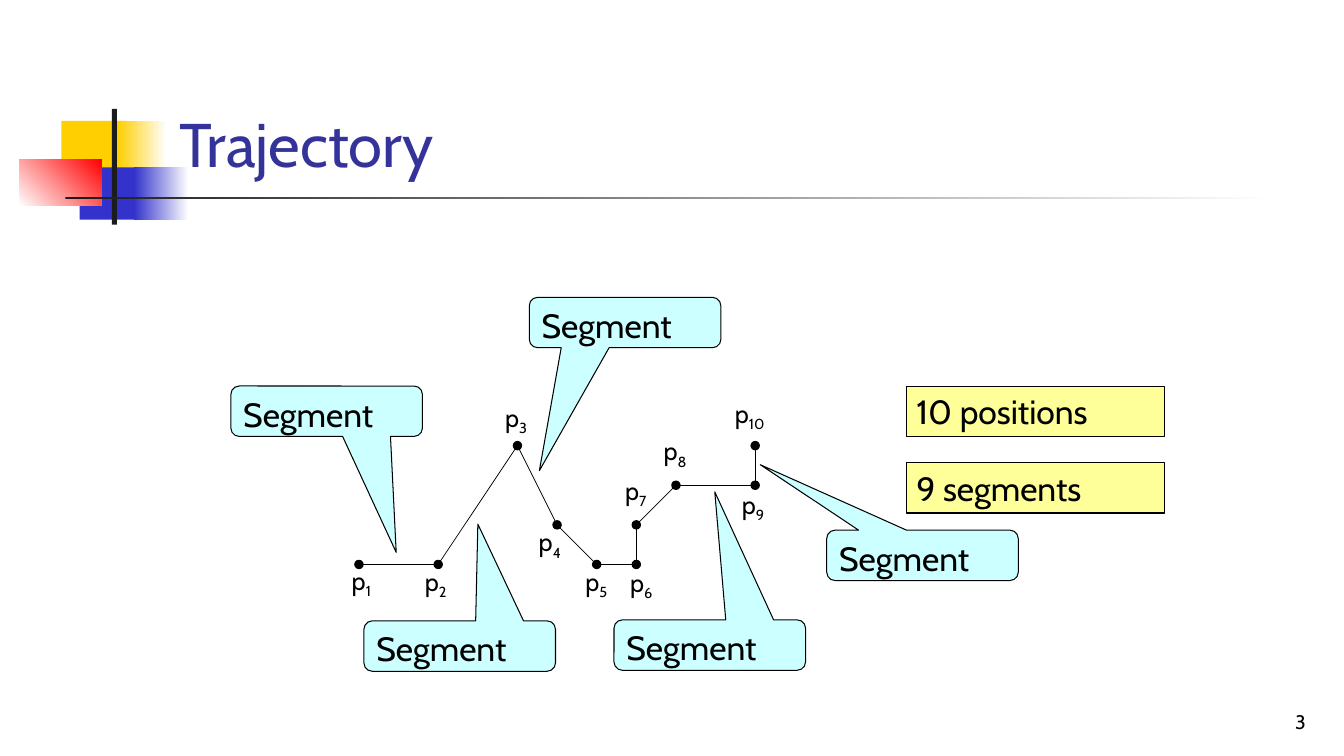
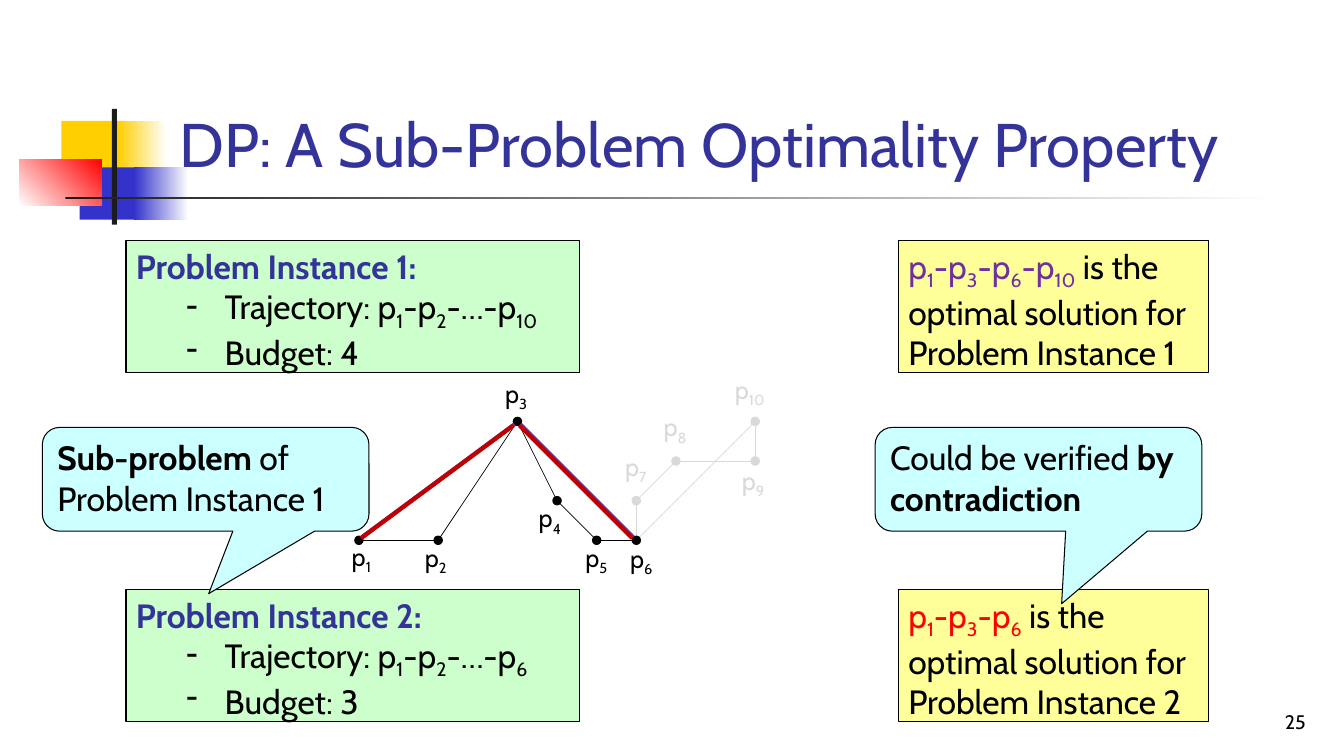
from collections import namedtuple
from itertools import pairwise

from lxml import etree
from pptx import Presentation
from pptx.dml.color import RGBColor
from pptx.enum.shapes import MSO_CONNECTOR, MSO_SHAPE
from pptx.enum.text import MSO_ANCHOR, MSO_AUTO_SIZE, PP_ALIGN
from pptx.oxml.ns import qn
from pptx.util import Inches, Pt

RECT, OVAL = MSO_SHAPE.RECTANGLE, MSO_SHAPE.OVAL
CALLOUT = MSO_SHAPE.ROUNDED_RECTANGULAR_CALLOUT
STRAIGHT = MSO_CONNECTOR.STRAIGHT
TOP, BOTTOM = MSO_ANCHOR.TOP, MSO_ANCHOR.BOTTOM
LEFT, RIGHT = PP_ALIGN.LEFT, PP_ALIGN.RIGHT
NO_FIT = MSO_AUTO_SIZE.NONE

FONT = "Cabin"
COLORS = {
    "black": "000000", "white": "FFFFFF", "title": "333399",
    "gold": "FFCF01", "blue": "3333CC", "red": "FF0000", "ink": "1C1C1C",
    "callout": "CCFFFF", "result": "FFFF99", "instance": "CCFFCC",
    "faded": "D9D9D9", "purple": "7030A0", "dark red": "C00000",
}

# Corner decoration: left, top, width, height, colours, gradient angle
BANDS = [
    (0.61, 1.2, 0.64, 0.52, ["gold"], 0),
    (1.17, 1.2, 0.48, 0.52, ["gold", "white"], 0),
    (0.79, 1.66, 0.62, 0.52, ["blue"], 0),
    (1.33, 1.66, 0.54, 0.52, ["blue", "white"], 0),
    (0.19, 1.58, 0.82, 0.46, ["white", "red"], 45),
    (1.11, 1.08, 0.05, 1.15, ["ink"], 0),
    (0.65, 1.95, 12, 0.03, ["ink", "white"], 0),
]

# Grid column and row of each position, and its label's offset in inches
Position = namedtuple("Position", "column row label_dx label_dy")
TRAJECTORY = {
    1: Position(0, 0, -0.17, -0.04),
    2: Position(2, 0, -0.23, -0.03),
    3: Position(4, 3, -0.22, -0.48),
    4: Position(5, 1, -0.28, -0.03),
    5: Position(6, 0, -0.21, -0.03),
    6: Position(7, 0, -0.16, -0.02),
    7: Position(7, 1, -0.21, -0.54),
    8: Position(8, 2, -0.22, -0.54),
    9: Position(10, 2, -0.23, -0.01),
    10: Position(10, 3, -0.3, -0.52),
}
GRID_LEFT, GRID_WIDTH, GRID_COLUMNS = 3.56, 3.93, 10
GRID_STEP = GRID_WIDTH / GRID_COLUMNS
DOT = 0.08
TRIM = 0.03


def rgb(color):
    return RGBColor.from_string(COLORS[color])


class Deck:
    """Holds the style, the presentation and the slide being drawn."""

    def __init__(self):
        self.prs = Presentation()
        self.prs.slide_width, self.prs.slide_height = Inches(13.33), Inches(7.5)
        self.shapes = None

    def new_slide(self, title, number):
        slide = self.prs.slides.add_slide(self.prs.slide_layouts[5])
        self.shapes = slide.shapes
        for left, top, width, height, colors, angle in BANDS:
            self.shape(RECT, (left, top, width, height), colors, angle=angle)
        heading = self.shapes.title
        heading.left, heading.top = Inches(1.68), Inches(0.23)
        heading.width, heading.height = Inches(11.36), Inches(1.6)
        self.fill_text(heading, [title], 44, "title", anchor=BOTTOM)
        self.text((10.27, 6.83, 2.78, 0.5), str(number), 14,
                  align=RIGHT, anchor=BOTTOM)

    def shape(self, kind, box, colors, line=None, line_width=0.75, angle=0):
        """Add a shape; two fill colours make a gradient."""
        shape = self.shapes.add_shape(kind, *map(Inches, box))
        shape.shadow.inherit = False
        if len(colors) == 1:
            shape.fill.solid()
            shape.fill.fore_color.rgb = rgb(colors[0])
        else:
            shape.fill.gradient()
            shape.fill.gradient_angle = angle
            for stop, color in zip(shape.fill.gradient_stops, colors):
                stop.color.rgb = rgb(color)
        if line:
            shape.line.color.rgb = rgb(line)
            shape.line.width = Pt(line_width)
        else:
            shape.line.fill.background()
        return shape

    def fill_text(self, shape, paragraphs, size=24, color="black", align=LEFT,
                  anchor=TOP):
        """Fill a shape with paragraphs, each a string or a list of
        (text, overrides); braces mark a subscript and a leading "- " a bullet."""
        frame = shape.text_frame
        frame.word_wrap = True
        frame.auto_size = NO_FIT
        frame.vertical_anchor = anchor
        for index, content in enumerate(paragraphs):
            paragraph = frame.add_paragraph() if index else frame.paragraphs[0]
            paragraph.alignment = align
            pieces = [(content, {})] if isinstance(content, str) else content
            if pieces[0][0].startswith("- "):
                self.bullet(paragraph)
                pieces = [(pieces[0][0][2:], pieces[0][1])] + pieces[1:]
            font = paragraph.font
            font.name, font.size, font.color.rgb = FONT, Pt(size), rgb(color)
            for text, overrides in pieces:
                self.runs(paragraph, text, **overrides)

    def runs(self, paragraph, text, color=None, bold=None):
        for index, part in enumerate(text.replace("}", "{").split("{")):
            if not part:
                continue
            run = paragraph.add_run()
            run.text = part
            if bold:
                run.font.bold = True
            if color:
                run.font.color.rgb = rgb(color)
            if index % 2:
                run.font._element.set("baseline", "-25000")

    def bullet(self, paragraph):
        paragraph.level = 1
        properties = paragraph._p.get_or_add_pPr()
        properties.set("marL", str(Inches(0.88)))
        properties.set("indent", str(Inches(-0.38)))
        etree.SubElement(properties, qn("a:buChar")).set("char", "-")

    def text(self, box, content, size, color="black", **layout):
        textbox = self.shapes.add_textbox(*map(Inches, box))
        self.fill_text(textbox, [content], size, color, **layout)

    def panel(self, box, fill, paragraphs):
        self.fill_text(self.shape(RECT, box, [fill], "black"), paragraphs)

    def callout(self, box, tip, content):
        """Add a speech bubble whose tail ends at the point tip."""
        bubble = self.shape(CALLOUT, box, ["callout"], "black")
        left, top, width, height = box
        bubble.adjustments[0] = (tip[0] - left) / width - 0.5
        bubble.adjustments[1] = (tip[1] - top) / height - 0.5
        self.fill_text(bubble, [content])

    def line(self, start, end, color, width=0.5):
        line = self.shapes.add_connector(STRAIGHT, *map(Inches, (*start, *end)))
        line.line.color.rgb = rgb(color)
        line.line.width = Pt(width)
        etree.SubElement(line._element.spPr, qn("a:effectLst"))

    def trajectory(self, base, route, color="black", dots=None):
        """Draw the segments along route, then the dots and labels (default: route)."""
        for first, second in pairwise(route):
            self.line(center(first, base), center(second, base), color)
        for number in dots or route:
            x, y = center(number, base)
            self.shape(OVAL, (x - DOT / 2, y - DOT / 2, DOT, DOT), [color],
                       color, 1)
            position = TRAJECTORY[number]
            width = 0.5 if number < 10 else 0.6
            self.text((x + position.label_dx, y + position.label_dy, width, 0.4),
                      f"p{{{number}}}", 18, color)

    def solution(self, base, route, color, shift=0):
        """Draw thick segments trimmed at the dots and shifted down-left."""
        for first, second in pairwise(route):
            (x1, y1), (x2, y2) = center(first, base), center(second, base)
            trim_y = TRIM if y2 > y1 else -TRIM
            self.line((x1 + TRIM - shift, y1 + trim_y + shift),
                      (x2 - TRIM - shift, y2 - trim_y + shift), color, 3)


def center(number, base):
    position = TRAJECTORY[number]
    return (GRID_LEFT + position.column * GRID_STEP,
            base - position.row * GRID_STEP)


def trajectory_slide(deck):
    deck.new_slide("Trajectory", 3)
    deck.trajectory(5.6, range(1, 11))
    for left, top, tip in [
        (2.29, 3.83, (3.93, 5.48)),
        (3.61, 6.16, (4.74, 5.2)),
        (6.09, 6.15, (7.09, 4.88)),
        (5.25, 2.95, (5.35, 4.67)),
        (8.2, 5.26, (7.54, 4.61)),
    ]:
        deck.callout((left, top, 1.9, 0.5), tip, "Segment")
    for top, count in [(3.83, "10 positions"), (4.59, "9 segments")]:
        deck.panel((8.99, top, 2.56, 0.5), "result", [count])


def optimality_slide(deck):
    deck.new_slide("DP: A Sub-Problem Optimality Property", 25)
    base = 5.36
    deck.trajectory(base, [6, 7, 8, 9, 10, 6], "faded", dots=range(7, 11))
    deck.trajectory(base, range(1, 7))
    deck.solution(base, [1, 3, 6], "purple")
    for instance, top, last, budget, optimum, color in [
        (1, 2.39, 10, 4, "p{1}-p{3}-p{6}-p{10}", "purple"),
        (2, 5.85, 6, 3, "p{1}-p{3}-p{6}", "red"),
    ]:
        heading = (f"Problem Instance {instance}:",
                   {"color": "title", "bold": True})
        deck.panel((1.25, top, 4.5, 1.31), "instance",
                   [[heading],
                    f"- Trajectory: p{{1}}-p{{2}}-…-p{{{last}}}",
                    f"- Budget: {budget}"])
        claim = f" is the optimal solution for Problem Instance {instance}"
        deck.panel((8.91, top, 3.08, 1.31), "result",
                   [[(optimum, {"color": color}), (claim, {})]])
    strong = {"bold": True}
    deck.callout((0.42, 4.24, 3.24, 1.03), (2.07, 5.89),
                 [("Sub-problem", strong), (" of Problem Instance 1", {})])
    deck.callout((8.68, 4.24, 3.24, 1.03), (10.53, 5.99),
                 [("Could be verified ", {}), ("by contradiction", strong)])
    deck.solution(base, [1, 3, 6], "dark red", shift=0.01)


def main():
    deck = Deck()
    trajectory_slide(deck)
    optimality_slide(deck)
    deck.prs.save("out.pptx")


if __name__ == "__main__":
    main()
